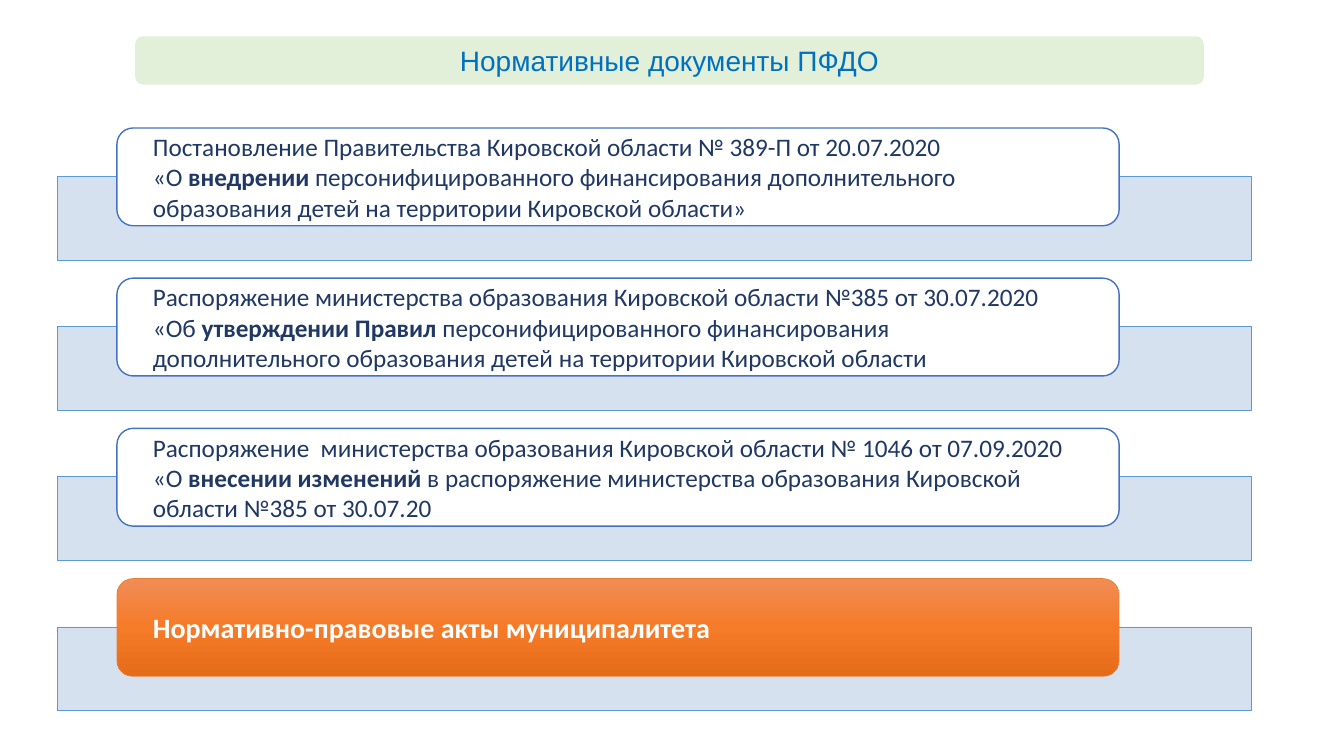
from copy import deepcopy

from lxml import etree
from pptx import Presentation
from pptx.dml.color import RGBColor
from pptx.enum.shapes import MSO_SHAPE
from pptx.enum.text import MSO_ANCHOR, PP_ALIGN
from pptx.oxml.ns import qn
from pptx.util import Inches, Pt

RECTANGLE = MSO_SHAPE.RECTANGLE
ROUNDED = MSO_SHAPE.ROUNDED_RECTANGLE
MIDDLE = MSO_ANCHOR.MIDDLE
LEFT, CENTER = PP_ALIGN.LEFT, PP_ALIGN.CENTER

WHITE = RGBColor(0xFF, 0xFF, 0xFF)
PALE_GREEN = RGBColor(0xE2, 0xF0, 0xD9)
TITLE_BLUE = RGBColor(0x00, 0x70, 0xC0)
BAND_FILL = RGBColor(0xD2, 0xDE, 0xEF)
BAND_LINE = RGBColor(0x5B, 0x9B, 0xD5)
CARD_LINE = RGBColor(0x44, 0x72, 0xC4)
NAVY = RGBColor(0x20, 0x38, 0x64)
ORANGE = RGBColor(0xED, 0x7D, 0x31)
ORANGE_STOPS = (
    (0, RGBColor(0xF1, 0x8C, 0x57)),
    (0.5, RGBColor(0xF6, 0x7B, 0x28)),
    (1, RGBColor(0xE5, 0x6C, 0x19)),
)

TITLE_BOX = (1.34, 0.36, 10.6, 0.48)
FIRST_CARD_TOP = 1.27
ROW_PITCH = 1.49
BAND_OFFSET = 0.48

# Each document is a list of paragraphs; each paragraph is (text, bold) runs.
DOCUMENTS = [
    [
        [("Постановление Правительства Кировской области № 389-П от 20.07.2020", False)],
        [("«О ", False), ("внедрении", True),
         (" персонифицированного финансирования дополнительного образования детей "
          "на территории Кировской области»", False)],
    ],
    [
        [("Распоряжение министерства образования Кировской области №385 от 30.07.2020 «Об ", False),
         ("утверждении Правил ", True),
         ("персонифицированного финансирования дополнительного образования детей "
          "на территории Кировской области", False)],
    ],
    [
        [("Распоряжение  министерства образования Кировской области № 1046 от 07.09.2020 «О ", False),
         ("внесении изменений", True),
         (" в распоряжение министерства образования Кировской области №385 от 30.07.20", False)],
    ],
]
MUNICIPAL_ACTS = [[("Нормативно-правовые акты муниципалитета", True)]]


class DocumentSlide:
    def __init__(self, presentation):
        self.slide = presentation.slides.add_slide(presentation.slide_layouts[5])
        self.title_font = "Arial"
        self.body_font = "Calibri"

    def box(self, kind, bounds, fill, line=None, line_width=0.5):
        shape = self.slide.shapes.add_shape(kind, *map(Inches, bounds))
        shape.shadow.inherit = False
        shape.fill.solid()
        shape.fill.fore_color.rgb = fill
        if line is None:
            shape.line.fill.background()
        else:
            shape.line.color.rgb = line
            shape.line.width = Pt(line_width)
        return shape

    def title(self, text):
        self.box(ROUNDED, TITLE_BOX, PALE_GREEN)
        title = self.slide.shapes.title
        title.left, title.top, title.width, title.height = map(Inches, TITLE_BOX)
        # Bring the title in front of its banner
        self.slide.shapes._spTree.append(title._element)
        frame = title.text_frame
        frame.text = text
        frame.vertical_anchor = MIDDLE
        paragraph = frame.paragraphs[0]
        paragraph.alignment = CENTER
        self.style(paragraph.font, self.title_font, 20, TITLE_BLUE)

    def band(self, top):
        band = self.box(RECTANGLE, (0.57, top, 11.84, 0.83), BAND_FILL, BAND_LINE)
        color = band._element.spPr.find(qn("a:solidFill"))[0]
        etree.SubElement(color, qn("a:alpha"), val="90000")

    def card(self, top, paragraphs, size=18, color=NAVY, line=CARD_LINE, line_width=1):
        card = self.box(ROUNDED, (1.16, top, 9.94, 0.97), WHITE, line, line_width)
        frame = card.text_frame
        frame.word_wrap = True
        frame.vertical_anchor = MIDDLE
        frame.margin_left = frame.margin_right = Inches(0.31)
        frame.margin_top = frame.margin_bottom = 0
        for index, runs in enumerate(paragraphs):
            paragraph = frame.add_paragraph() if index else frame.paragraphs[0]
            paragraph.alignment = LEFT
            self.style(paragraph.font, self.body_font, size, color)
            for text, bold in runs:
                run = paragraph.add_run()
                run.text = text
                run.font.bold = bold
        return card

    def highlight_card(self, top, paragraphs):
        card = self.card(top, paragraphs, 20, WHITE, ORANGE, 0.5)
        card.fill.gradient()
        card.fill.gradient_angle = 270
        stop_list = card._element.spPr.find(qn("a:gradFill")).find(qn("a:gsLst"))
        stop_list.append(deepcopy(stop_list[0]))
        for stop, (position, color) in zip(card.fill.gradient_stops, ORANGE_STOPS):
            stop.position = position
            stop.color.rgb = color

    def style(self, font, name, size, color):
        font.name = name
        font.size = Pt(size)
        font.color.rgb = color


def main():
    presentation = Presentation()
    presentation.slide_width = Inches(13.33)
    presentation.slide_height = Inches(7.5)

    page = DocumentSlide(presentation)
    page.title("Нормативные документы ПФДО")
    for row, paragraphs in enumerate(DOCUMENTS + [MUNICIPAL_ACTS]):
        top = FIRST_CARD_TOP + row * ROW_PITCH
        page.band(top + BAND_OFFSET)
        if paragraphs is MUNICIPAL_ACTS:
            page.highlight_card(top, paragraphs)
        else:
            page.card(top, paragraphs)

    presentation.save("out.pptx")


if __name__ == "__main__":
    main()
